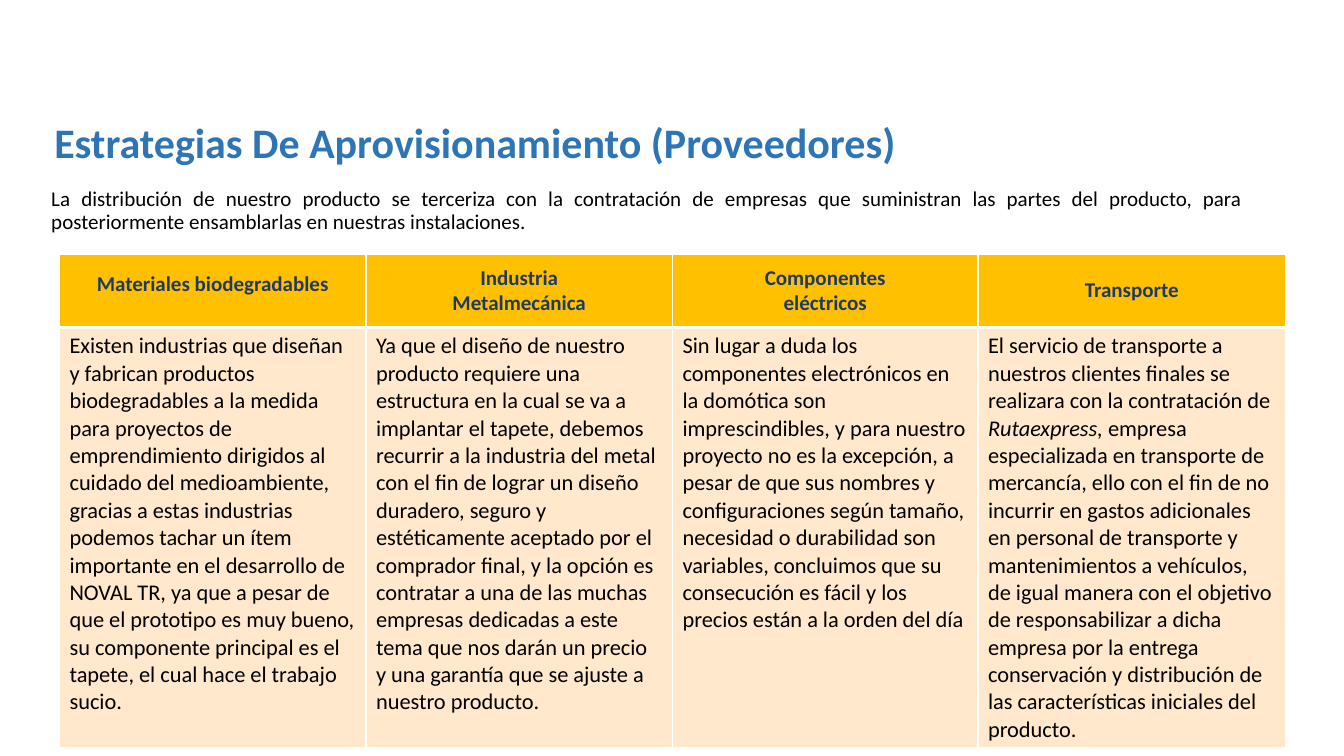
"""Build the supplier strategy slide: heading, introduction and a four-column table."""
from lxml import etree
from pptx import Presentation
from pptx.dml.color import RGBColor
from pptx.enum.text import MSO_ANCHOR, PP_ALIGN
from pptx.oxml.ns import qn
from pptx.util import Inches, Pt

CENTER, JUSTIFY, LEFT = PP_ALIGN.CENTER, PP_ALIGN.JUSTIFY, PP_ALIGN.LEFT
TOP, MIDDLE, BOTTOM = MSO_ANCHOR.TOP, MSO_ANCHOR.MIDDLE, MSO_ANCHOR.BOTTOM

FONT = "Calibri"
BLUE, NAVY, BLACK, WHITE = "2E75B6", "203864", "000000", "FFFFFF"
GOLD, CREAM = "FFC000", "FFE8CC"

HEADING = "Estrategias De Aprovisionamiento (Proveedores)"
INTRODUCTION = (
    "La distribución de nuestro producto se terceriza con la contratación de empresas que "
    "suministran las partes del producto, para posteriormente ensamblarlas en nuestras "
    "instalaciones."
)
CARRIER = "Rutaexpress, "
SUPPLIERS = [
    (["Materiales biodegradables"], [
        "Existen industrias que diseñan y fabrican productos biodegradables a la medida para "
        "proyectos de emprendimiento dirigidos al cuidado del medioambiente, gracias a estas "
        "industrias podemos tachar un ítem importante en el desarrollo de NOVAL TR, ya que a "
        "pesar de que el prototipo es muy bueno, su componente principal es el tapete, el cual "
        "hace el trabajo sucio."]),
    (["Industria", "Metalmecánica"], [
        "Ya que el diseño de nuestro producto requiere una estructura en la cual se va a "
        "implantar el tapete, debemos recurrir a la industria del metal con el fin de lograr un "
        "diseño duradero, seguro y estéticamente aceptado por el comprador final, y la opción es "
        "contratar a una de las muchas empresas dedicadas a este tema que nos darán un precio y "
        "una garantía que se ajuste a nuestro producto."]),
    (["Componentes", "eléctricos"], [
        "Sin lugar a duda los componentes electrónicos en la domótica son imprescindibles, y "
        "para nuestro proyecto no es la excepción, a pesar de que sus nombres y configuraciones "
        "según tamaño, necesidad o durabilidad son variables, concluimos que su consecución es "
        "fácil y los precios están a la orden del día"]),
    (["Transporte"], [
        "El servicio de transporte a nuestros clientes finales se realizara con la contratación "
        "de ",
        CARRIER,
        "empresa especializada en transporte de mercancía, ello con el fin de no incurrir en "
        "gastos adicionales en personal de transporte y mantenimientos a vehículos, de igual "
        "manera con el objetivo de responsabilizar a dicha empresa por la entrega conservación y "
        "distribución de las características iniciales del producto."]),
]

SLIDE_SIZE = (13.33, 7.5)
HEADING_BOX = (0.44, 1.13, 11.5, 0.61)
INTRODUCTION_BOX = (0.41, 1.82, 12.01, 5.22)
TABLE_BOX = (0.59, 2.52, 12.16, 4.9)
COLUMN_WIDTHS = (3.04, 3.04, 3.03, 3.05)
HEADER_HEIGHT = 0.73
RAISED_MARGIN = 0.3


def color(hex_code):
    return RGBColor.from_string(hex_code)


def write(frame, paragraphs, size, ink, align, bold=False, spacing=None):
    """Fill a text frame with paragraphs, each given as a list of runs."""
    frame.word_wrap = True
    for index, runs in enumerate(paragraphs):
        paragraph = frame.add_paragraph() if index else frame.paragraphs[0]
        paragraph.alignment = align
        paragraph.line_spacing = spacing
        font = paragraph.font
        font.name, font.size, font.bold = FONT, Pt(size), bold
        font.color.rgb = color(ink)
        for words in runs:
            run = paragraph.add_run()
            run.text = words
            if words == CARRIER:
                run.font.italic = True


def add_text(slide, box, words, anchor, **style):
    frame = slide.shapes.add_textbox(*map(Inches, box)).text_frame
    frame.vertical_anchor = anchor
    write(frame, [[words]], spacing=0.9, **style)


def dress(cell, fill, bottom_width):
    """Give a cell white borders and a solid fill."""
    properties = cell._tc.get_or_add_tcPr()
    for side, width in (("L", 1), ("R", 1), ("T", 1), ("B", bottom_width)):
        border = etree.SubElement(properties, qn(f"a:ln{side}"), w=str(Pt(width)))
        solid = etree.SubElement(border, qn("a:solidFill"))
        etree.SubElement(solid, qn("a:srgbClr"), val=WHITE)
    cell.fill.solid()
    cell.fill.fore_color.rgb = color(fill)


def add_supplier_table(slide):
    table = slide.shapes.add_table(2, len(SUPPLIERS), *map(Inches, TABLE_BOX)).table
    table.rows[0].height = Inches(HEADER_HEIGHT)
    table.rows[1].height = Inches(TABLE_BOX[3] - HEADER_HEIGHT)
    for column, (name_lines, description) in enumerate(SUPPLIERS):
        table.columns[column].width = Inches(COLUMN_WIDTHS[column])
        header, body = table.cell(0, column), table.cell(1, column)
        dress(header, GOLD, bottom_width=3)
        dress(body, CREAM, bottom_width=1)
        header.vertical_anchor = MIDDLE if column else BOTTOM
        if not column:
            header.margin_bottom = Inches(RAISED_MARGIN)
        body.vertical_anchor = TOP
        write(header.text_frame, [[line] for line in name_lines], 15, NAVY, CENTER, bold=True)
        write(body.text_frame, [description], 16, BLACK, LEFT)


def main():
    deck = Presentation()
    deck.slide_width, deck.slide_height = map(Inches, SLIDE_SIZE)
    slide = deck.slides.add_slide(deck.slide_layouts[6])
    add_text(slide, HEADING_BOX, HEADING, MIDDLE, size=30, ink=BLUE, align=LEFT, bold=True)
    add_text(slide, INTRODUCTION_BOX, INTRODUCTION, TOP, size=15, ink=BLACK, align=JUSTIFY)
    add_supplier_table(slide)
    deck.save("out.pptx")


if __name__ == "__main__":
    main()
